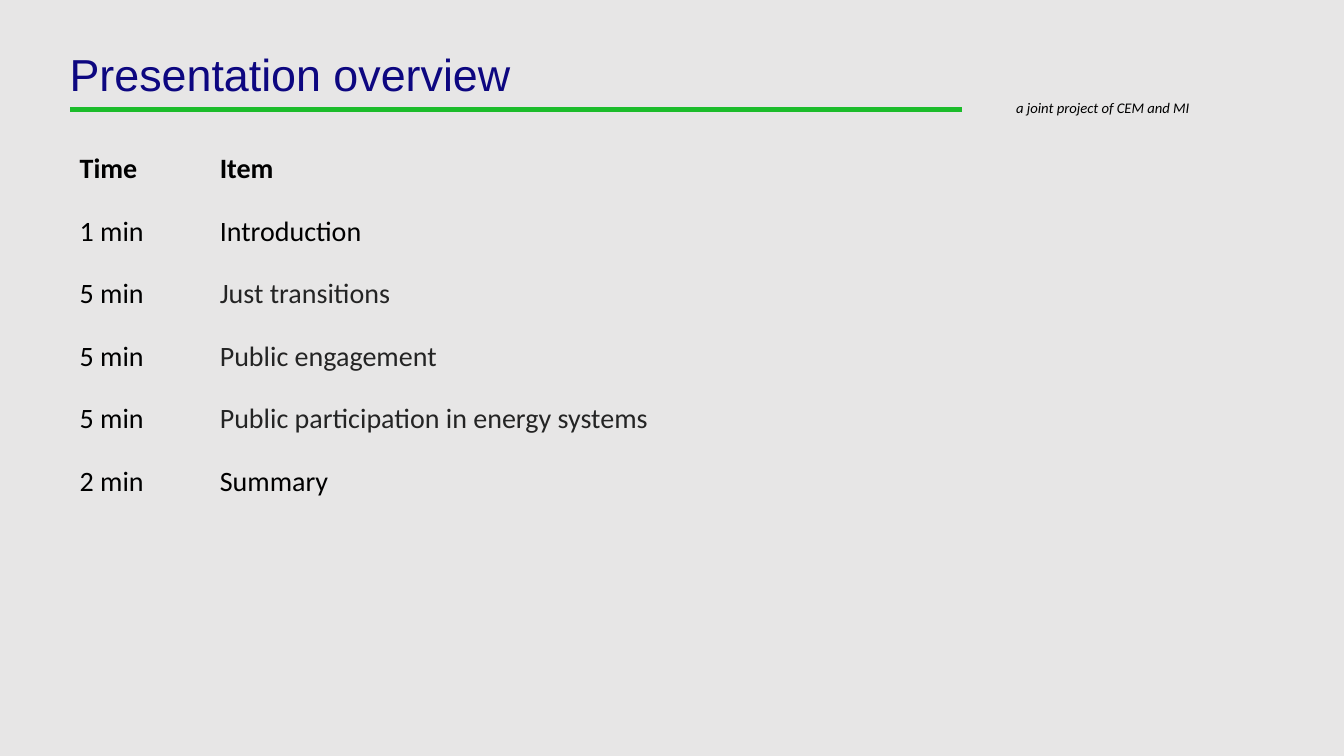
from dataclasses import dataclass

from pptx import Presentation
from pptx.dml.color import RGBColor
from pptx.enum.text import MSO_ANCHOR, PP_ALIGN
from pptx.oxml.ns import qn
from pptx.slide import Slide
from pptx.text.text import TextFrame
from pptx.util import Inches, Pt

MIDDLE = MSO_ANCHOR.MIDDLE
LEFT = PP_ALIGN.LEFT
TITLE_ONLY = 5
NO_GRID_STYLE = "{2D5ABB26-0587-4C30-8999-92F81FD0307C}"


@dataclass(frozen=True)
class TextStyle:
    font: str
    size: float
    color: str
    bold: bool = False
    italic: bool = False


@dataclass(frozen=True)
class Theme:
    background: str = "E7E6E6"
    rule: str = "1CBC2B"
    title: TextStyle = TextStyle("Arial", 32, "0D0780")
    credit: TextStyle = TextStyle("Calibri", 10.5, "000000", italic=True)
    heading: TextStyle = TextStyle("Calibri", 20, "000000", bold=True)
    body: TextStyle = TextStyle("Calibri", 20, "000000")
    topic: TextStyle = TextStyle("Calibri", 20, "242424")


@dataclass(frozen=True)
class AgendaRow:
    time: str
    item: str
    time_style: TextStyle
    item_style: TextStyle


THEME = Theme()
AGENDA = [
    AgendaRow("Time", "Item", THEME.heading, THEME.heading),
    AgendaRow("1 min", "Introduction", THEME.body, THEME.body),
    AgendaRow("5 min", "Just transitions", THEME.body, THEME.topic),
    AgendaRow("5 min", "Public engagement", THEME.body, THEME.topic),
    AgendaRow("5 min", "Public participation in energy systems", THEME.body, THEME.topic),
    AgendaRow("2 min", "Summary", THEME.body, THEME.body),
]
COLUMN_WIDTHS = (1.39, 7.75)
ROW_HEIGHT = 0.62


def write(frame: TextFrame, text: str, style: TextStyle) -> None:
    frame.text = text
    font = frame.paragraphs[0].runs[0].font
    font.name = style.font
    font.size = Pt(style.size)
    font.bold = style.bold
    font.italic = style.italic
    font.color.rgb = RGBColor.from_string(style.color)


def draw_title(slide: Slide) -> None:
    title = slide.shapes.title
    title.left, title.top = Inches(0.69), Inches(0.52)
    title.width, title.height = Inches(8.86), Inches(0.48)
    frame = title.text_frame
    frame.margin_left = frame.margin_right = 0
    frame.margin_top = frame.margin_bottom = 0
    frame.vertical_anchor = MIDDLE
    write(frame, "Presentation overview", THEME.title)
    heading = frame.paragraphs[0]
    heading.line_spacing = 0.9
    heading.alignment = LEFT


def draw_rule(slide: Slide) -> None:
    left, top, right, bottom = Inches(0.7), Inches(1.07), Inches(9.54), Inches(1.11)
    outline = slide.shapes.build_freeform(left, top)
    outline.add_line_segments([(right, top), (right, bottom), (left, bottom)])
    rule = outline.convert_to_shape()
    rule.shadow.inherit = False
    rule.fill.solid()
    rule.fill.fore_color.rgb = RGBColor.from_string(THEME.rule)
    rule.line.color.rgb = RGBColor.from_string(THEME.rule)
    rule.line.width = Pt(0.01)


def draw_credit(slide: Slide) -> None:
    credit = slide.shapes.add_textbox(
        Inches(9.98), Inches(0.93), Inches(2.43), Inches(0.28)
    )
    credit.text_frame.word_wrap = True
    write(credit.text_frame, "a joint project of CEM and MI", THEME.credit)


def draw_agenda(slide: Slide, agenda: list[AgendaRow]) -> None:
    table = slide.shapes.add_table(
        len(agenda), len(COLUMN_WIDTHS), Inches(0.69), Inches(1.46),
        Inches(sum(COLUMN_WIDTHS)), Inches(ROW_HEIGHT * len(agenda)),
    ).table
    table.first_row = table.horz_banding = False
    table._tbl.tblPr.find(qn("a:tableStyleId")).text = NO_GRID_STYLE
    for column, width in zip(table.columns, COLUMN_WIDTHS):
        column.width = Inches(width)
    for index, entry in enumerate(agenda):
        table.rows[index].height = Inches(ROW_HEIGHT)
        time_cell, item_cell = table.cell(index, 0), table.cell(index, 1)
        time_cell.fill.background()
        item_cell.fill.background()
        write(time_cell.text_frame, entry.time, entry.time_style)
        write(item_cell.text_frame, entry.item, entry.item_style)


def main() -> None:
    presentation = Presentation()
    presentation.slide_width = Inches(13.33)
    presentation.slide_height = Inches(7.5)
    slide = presentation.slides.add_slide(presentation.slide_layouts[TITLE_ONLY])
    slide.background.fill.solid()
    slide.background.fill.fore_color.rgb = RGBColor.from_string(THEME.background)
    draw_rule(slide)
    draw_credit(slide)
    draw_title(slide)
    draw_agenda(slide, AGENDA)
    presentation.save("out.pptx")


if __name__ == "__main__":
    main()
